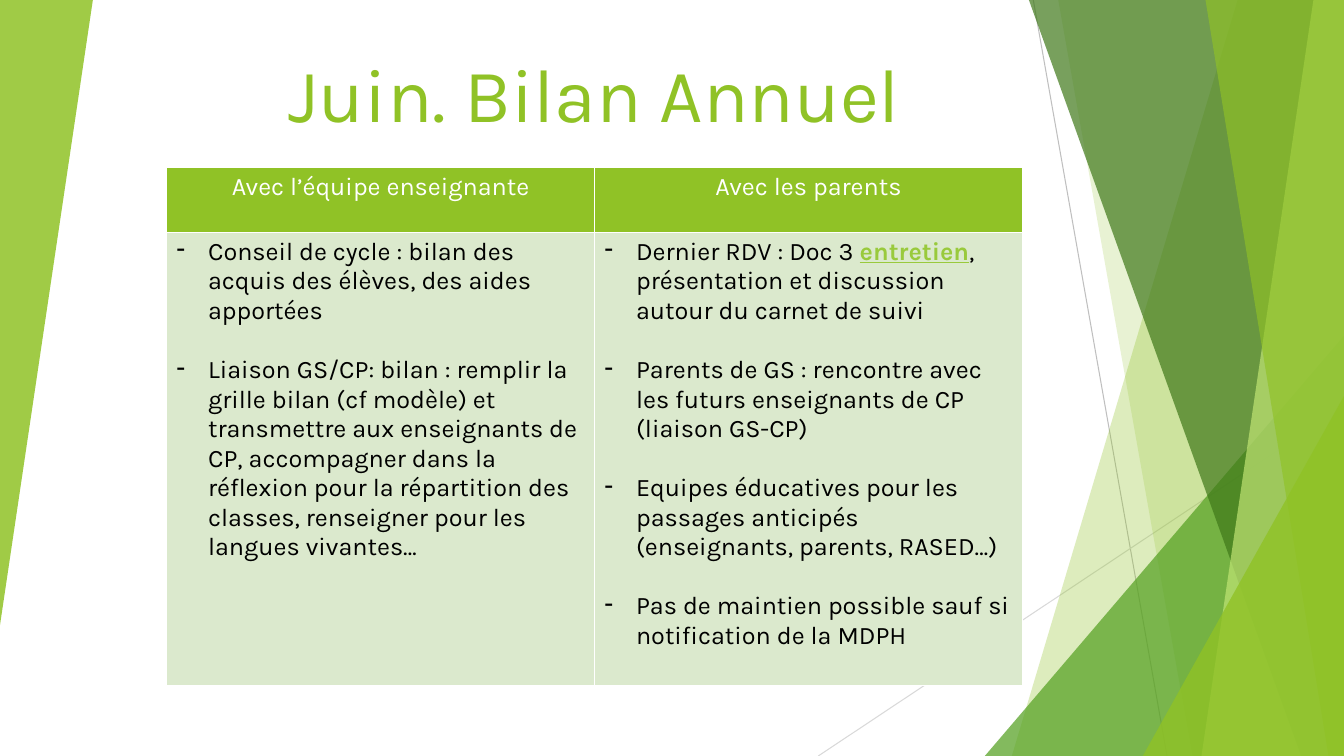
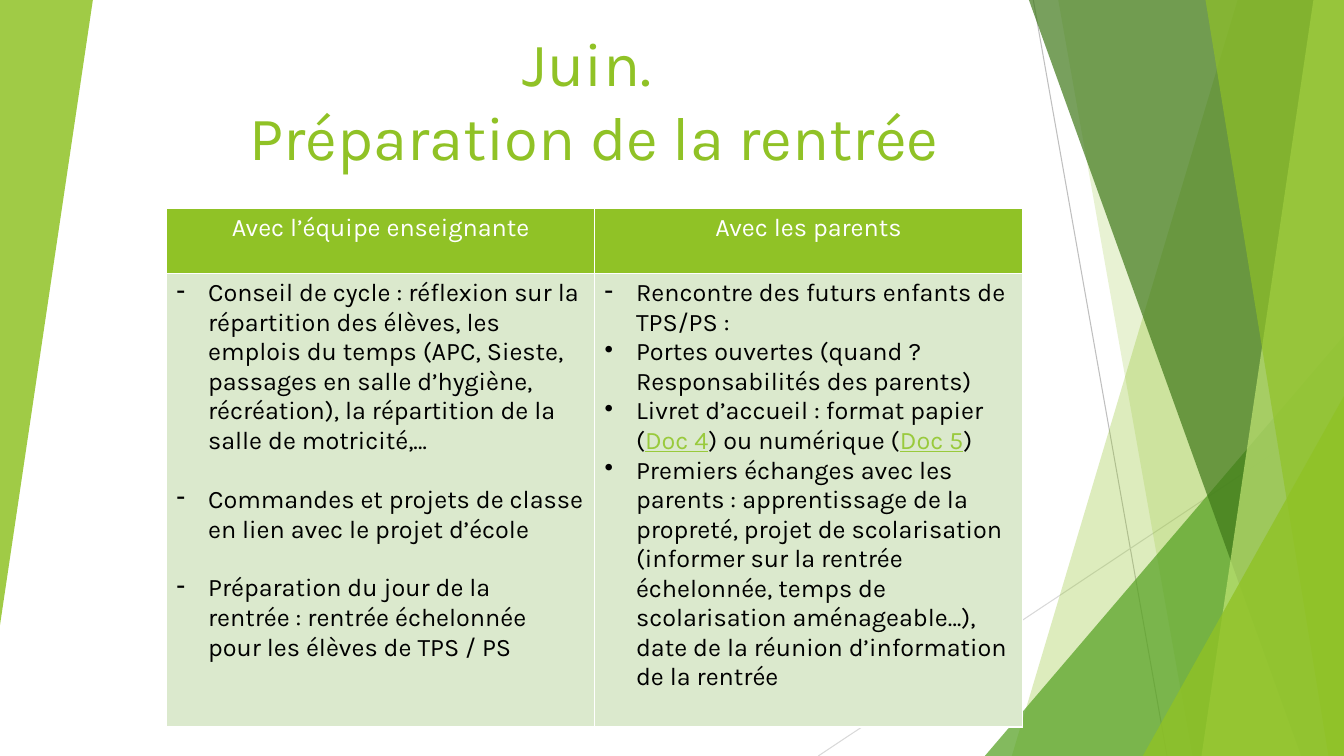
from dataclasses import dataclass

from lxml import etree
from pptx import Presentation
from pptx import util as u
from pptx.dml.color import RGBColor
from pptx.enum import shapes, text
from pptx.oxml.ns import qn


@dataclass(frozen=True)
class Theme:
    font: str = "Karla"
    green: str = "90C226"
    mid: str = "54A021"
    dark: str = "3F7819"
    light: str = "C0E474"
    link: str = "99CA3C"
    cell: str = "DBE9CD"
    white: str = "FFFFFF"
    black: str = "000000"
    grey: str = "BFBFBF"
    pale_grey: str = "D9D9D9"
    title_size: int = 54
    long_title_size: int = 44
    body_size: int = 18
    item_gap: int = 21
    rule: float = 0.75


T = Theme()
SLIDE_W, SLIDE_H = 33.87, 19.05
LEFT, CONTENT_W, TITLE_H = 4.2, 21.57, 2.03
ROW_HEIGHTS = 1.63, 11.43
INDENT = 0.79
HEADERS = "Avec l’équipe enseignante", "Avec les parents"


def rgb(code):
    return RGBColor.from_string(code)


def add_text(p, content, size=T.body_size, color=T.black, bold=False, underline=False):
    r = p.add_run()
    r.text = content
    f = r.font
    f.name, f.size, f.bold, f.underline = T.font, u.Pt(size), bold, underline
    f.color.rgb = rgb(color)


def paint(sp, color, opacity):
    """Fill without outline; opacity is a percentage."""
    sp.shadow.inherit = False
    sp.line.fill.background()
    sp.fill.solid()
    sp.fill.fore_color.rgb = rgb(color)
    clr = sp.element.spPr.find(qn("a:solidFill"))[0]
    etree.SubElement(clr, qn("a:alpha"), val=str(opacity * 1000))


def add_line(s, x1, y1, x2, y2, color):
    ln = s.shapes.add_connector(shapes.MSO_CONNECTOR.STRAIGHT,
                                u.Cm(x1), u.Cm(y1), u.Cm(x2), u.Cm(y2))
    ln.line.color.rgb = rgb(color)
    ln.line.width = u.Pt(T.rule)
    etree.SubElement(ln.element.spPr, qn("a:effectLst"))


def add_band(s, top_x, bottom_x, color, opacity):
    """Full-height band from a slanted edge to the right side of the slide."""
    fb = s.shapes.build_freeform(u.Cm(top_x), 0)
    fb.add_line_segments([(u.Cm(x), u.Cm(y)) for x, y in
                          ((SLIDE_W, 0), (SLIDE_W, SLIDE_H), (bottom_x, SLIDE_H))])
    paint(fb.convert_to_shape(), color, opacity)


def add_corner(s, x, y, w, h, color, opacity, rotation=0):
    """Right-angled triangle, its apex over the right end of the base."""
    sp = s.shapes.add_shape(shapes.MSO_SHAPE.ISOSCELES_TRIANGLE,
                            u.Cm(x), u.Cm(y), u.Cm(w), u.Cm(h))
    sp.adjustments[0] = 1
    sp.rotation = rotation
    paint(sp, color, opacity)


def add_backdrop(prs, layout):
    """Draw the facets on the first slide, then move them to the layout."""
    for ph in list(layout.placeholders):
        layout.shapes.element.remove(ph.element)
    s = prs.slides.add_slide(layout)
    add_line(s, 26.04, 0, 29.41, SLIDE_H, T.grey)
    add_line(s, SLIDE_W, 10.24, 20.62, SLIDE_H, T.pale_grey)
    add_band(s, 31.19, 25.5, T.green, 30)
    add_band(s, 26.67, 30.05, T.green, 20)
    add_corner(s, 24.82, 8.46, 9.05, 10.59, T.mid, 72)
    add_band(s, 25.93, 32.79, T.dark, 70)
    add_band(s, 33.1, 30.28, T.light, 70)
    add_band(s, 30.38, 33.48, T.green, 65)
    add_corner(s, 28.8, 9.98, 5.07, 9.07, T.green, 80)
    add_corner(s, 0, 0, 2.34, 15.75, T.green, 85, rotation=180)
    for sp in list(s.shapes):
        layout.shapes.element.append(sp.element)
    return s


def add_title(s, lines, top, size):
    tf = s.shapes.add_textbox(u.Cm(LEFT), u.Cm(top), u.Cm(CONTENT_W), u.Cm(TITLE_H)).text_frame
    tf.word_wrap = True
    tf.vertical_anchor = text.MSO_ANCHOR.BOTTOM
    p = tf.paragraphs[0]
    p.alignment = text.PP_ALIGN.CENTER
    for i, line in enumerate(lines):
        if i:
            p.add_line_break()
        add_text(p, line, size=size, color=T.green)


def style_cell(cell, color):
    cell.fill.solid()
    cell.fill.fore_color.rgb = rgb(color)
    tc_pr = cell.fill._xPr
    for i, side in enumerate("LRTB"):
        ln = etree.Element(qn(f"a:ln{side}"), w=str(u.Pt(1)))
        fill = etree.SubElement(ln, qn("a:solidFill"))
        etree.SubElement(fill, qn("a:srgbClr"), val=T.white)
        tc_pr.insert(i, ln)


def fill_list(tf, items, bold_links):
    """Items start with their bullet sign; words between underscores are links."""
    for i, item in enumerate(items):
        p = tf.add_paragraph() if i else tf.paragraphs[0]
        bullet, content = item.split(" ", 1)
        if i and bullet == "-":
            p.space_before = u.Pt(T.item_gap)
        p_pr = p._p.get_or_add_pPr()
        p_pr.set("marL", str(u.Cm(INDENT)))
        p_pr.set("indent", str(-u.Cm(INDENT)))
        etree.SubElement(p_pr, qn("a:buChar"), char=bullet)
        for j, part in enumerate(content.split("_")):
            if j % 2:
                add_text(p, part, color=T.link, bold=bold_links, underline=True)
            else:
                add_text(p, part)


def add_two_column_table(s, top, columns, bold_links):
    tbl = s.shapes.add_table(2, 2, u.Cm(LEFT), u.Cm(top),
                             u.Cm(CONTENT_W), u.Cm(sum(ROW_HEIGHTS))).table
    tbl.horz_banding = False
    for row, height in zip(tbl.rows, ROW_HEIGHTS):
        row.height = u.Cm(height)
    for c, (header, items) in enumerate(zip(HEADERS, columns)):
        head, body = tbl.cell(0, c), tbl.cell(1, c)
        style_cell(head, T.green)
        style_cell(body, T.cell)
        p = head.text_frame.paragraphs[0]
        p.alignment = text.PP_ALIGN.CENTER
        add_text(p, header, color=T.white)
        fill_list(body.text_frame, items, bold_links)


def add_content(s, title, title_top, title_size, table_top, columns, bold_links=False):
    add_title(s, title, title_top, title_size)
    add_two_column_table(s, table_top, columns, bold_links)


REVIEW = (
    ("- Conseil de cycle : bilan des acquis des élèves, des aides apportées",
     "- Liaison GS/CP: bilan : remplir la grille bilan (cf modèle) et transmettre aux "
     "enseignants de CP, accompagner dans la réflexion pour la répartition des classes, "
     "renseigner pour les langues vivantes…"),
    ("- Dernier RDV : Doc 3 _entretien_, présentation et discussion autour du carnet de suivi",
     "- Parents de GS : rencontre avec les futurs enseignants de CP (liaison GS-CP)",
     "- Equipes éducatives pour les passages anticipés (enseignants, parents, RASED…)",
     "- Pas de maintien possible sauf si notification de la MDPH"),
)
NEW_YEAR = (
    ("- Conseil de cycle : réflexion sur la répartition des élèves, les emplois du temps "
     "(APC, Sieste, passages en salle d’hygiène, récréation), la répartition de la salle "
     "de motricité,…",
     "- Commandes et projets de classe en lien avec le projet d’école",
     "- Préparation du jour de la rentrée : rentrée échelonnée pour les élèves de TPS / PS"),
    ("- Rencontre des futurs enfants de TPS/PS :",
     "• Portes ouvertes (quand ? Responsabilités des parents)",
     "• Livret d’accueil : format papier (_Doc 4_) ou numérique (_Doc 5_)",
     "• Premiers échanges avec les parents : apprentissage de la propreté, projet de "
     "scolarisation (informer sur la rentrée échelonnée, temps de scolarisation "
     "aménageable…), date de la réunion d’information de la rentrée"),
)


def main():
    prs = Presentation()
    prs.slide_width, prs.slide_height = u.Cm(SLIDE_W), u.Cm(SLIDE_H)
    blank = prs.slide_layouts[6]
    s = add_backdrop(prs, blank)
    add_content(s, ["Juin. Bilan Annuel"], 1.57, T.title_size, 4.22, REVIEW, bold_links=True)
    s = prs.slides.add_slide(blank)
    add_content(s, ["Juin. ", "Préparation de la rentrée"], 2.44, T.long_title_size,
                5.26, NEW_YEAR)
    prs.save("out.pptx")


if __name__ == "__main__":
    main()
